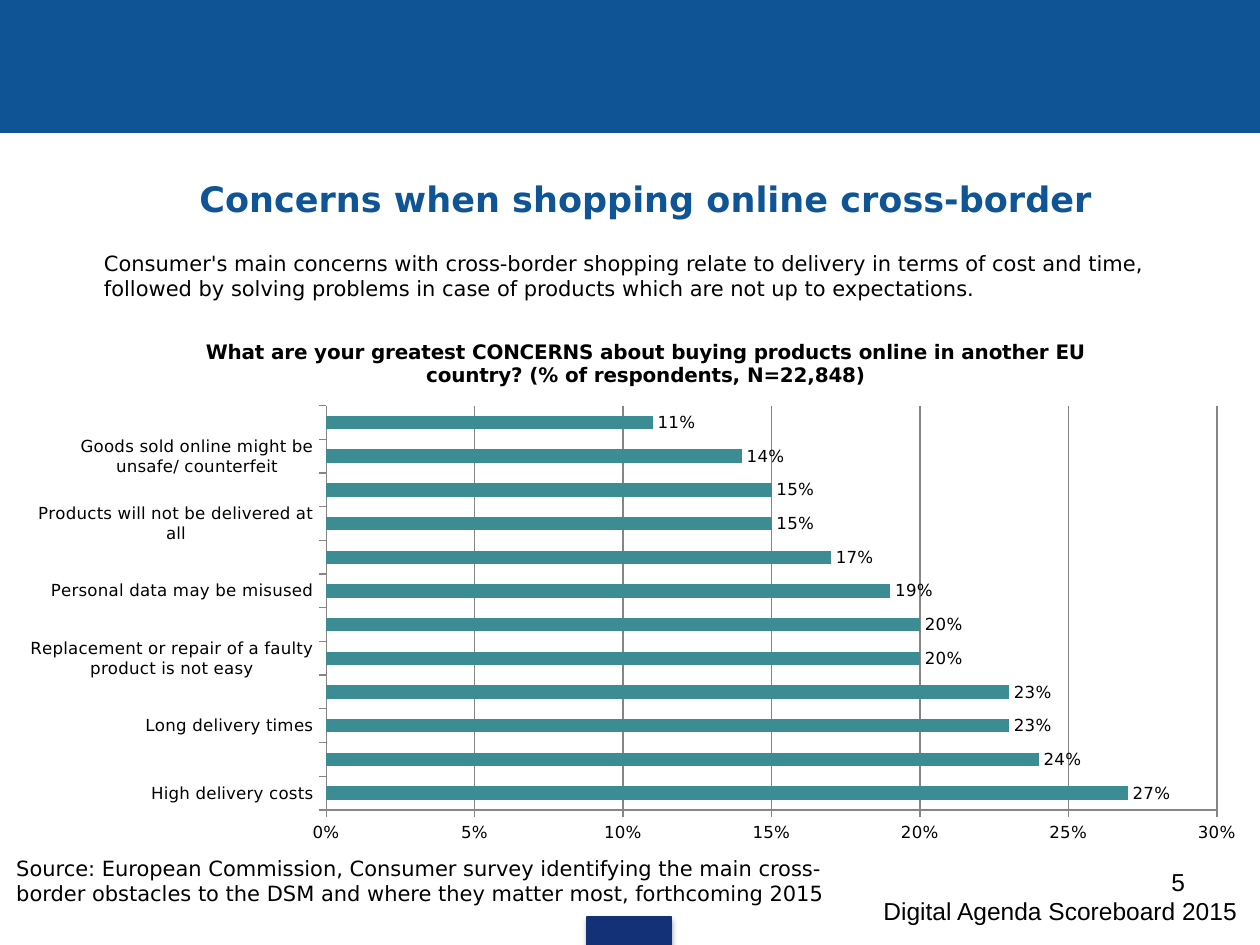
import lxml.etree
import pptx
import pptx.chart.data
import pptx.dml.color
import pptx.enum.chart
import pptx.enum.text
import pptx.oxml
import pptx.oxml.ns
import pptx.util

Pt = pptx.util.Pt
RGB = pptx.dml.color.RGBColor
ALIGN = pptx.enum.text.PP_ALIGN
BLUE = RGB(0x0F, 0x54, 0x94)
NAVY = RGB(0x13, 0x31, 0x76)
TEAL = RGB(0x3C, 0x8C, 0x93)
GREY = RGB(0x86, 0x86, 0x86)
BLACK = RGB(0, 0, 0)
SANS = "DejaVu Sans"
CHART_TITLE = ("What are your greatest CONCERNS about buying products online in "
               "another EU country? (% of respondents, N=22,848)")
CONCERNS = [
    ("High delivery costs", 0.27),
    ("High return shipping costs", 0.24),
    ("Long delivery times", 0.23),
    ("It may be more difficult to solve any problems", 0.23),
    ("Replacement or repair of a faulty product is not easy", 0.2),
    ("Returning a product I didn't like and getting reimbursed is not easy", 0.2),
    ("Personal data may be misused", 0.19),
    ("The payment card details may be stolen", 0.17),
    ("Products will not be delivered at all", 0.15),
    ("Wrong or damaged products will be delivered", 0.15),
    ("Goods sold online might be unsafe/ counterfeit", 0.14),
    ("I do not know consumer rights when buying online from another EU country", 0.11),
]


def parse(tag, body):
    """Build an XML element in the drawing and chart namespaces."""
    return pptx.oxml.parse_xml(
        f"<{tag} {pptx.oxml.ns.nsdecls('a', 'c')}>{body}</{tag.split()[0]}>")


def style(font, size, color=BLACK, name=SANS, bold=False):
    """Set the size, colour, face and weight of a font."""
    font.size, font.name, font.bold = Pt(size), name, bold
    font.color.rgb = color


def place(shape, box):
    """Move a shape to a box of left, top, width and height."""
    shape.left, shape.top, shape.width, shape.height = map(Pt, box)


def add_bar(slide, box, color):
    """Draw a filled rectangle."""
    bar = slide.shapes.add_shape(1, *map(Pt, box))
    bar.shadow.inherit = False
    bar.fill.solid()
    bar.fill.fore_color.rgb = color
    bar.line.color.rgb = color
    bar.line.width = Pt(0.75)
    return bar


def add_bands(slide, box):
    """Draw the header band and the small raised tab at the foot."""
    left, top, width, height = box
    add_bar(slide, (left, top, width, 75.6), BLUE)
    tab = add_bar(slide, (left + 335.5, top + height - 16, 48.2, 16), NAVY)
    shade = parse('a:outerShdw blurRad="39370" dist="22860" dir="5400000" rotWithShape="0"',
                  '<a:srgbClr val="000000"><a:alpha val="35000"/></a:srgbClr>')
    tab._element.spPr.find(pptx.oxml.ns.qn("a:effectLst")).append(shade)


def add_title(slide, box):
    """Fill the title placeholder."""
    title = slide.shapes.title
    place(title, box)
    frame = title.text_frame
    frame.text = "Concerns when shopping online cross-border"
    frame.auto_size = pptx.enum.text.MSO_AUTO_SIZE.NONE
    frame.vertical_anchor = pptx.enum.text.MSO_ANCHOR.MIDDLE
    para = frame.paragraphs[0]
    para.alignment = ALIGN.CENTER
    para._p.get_or_add_pPr().set("marL", str(Pt(28)))
    style(para.font, 20, BLUE, bold=True)


def add_body(slide, box):
    """Fill the body placeholder, whose bullet is white."""
    body = slide.placeholders[1]
    place(body, box)
    frame = body.text_frame
    frame.text = ("Consumer's main concerns with cross-border shopping relate to delivery "
                  "in terms of cost and time, followed by solving problems in case of "
                  "products which are not up to expectations.")
    frame.auto_size = pptx.enum.text.MSO_AUTO_SIZE.NONE
    para = frame.paragraphs[0]
    para.space_before = Pt(0)
    props = para._p.get_or_add_pPr()
    props.set("marL", str(Pt(27)))
    props.set("indent", str(Pt(-27)))
    props.append(parse("a:buClr", '<a:srgbClr val="FFFFFF"/>'))
    props.append(parse('a:buChar char="•"', ""))
    style(para.font, 12)


def add_note(slide, box, text, size, name, align):
    """Add a wrapped text box of one paragraph."""
    frame = slide.shapes.add_textbox(*map(Pt, box)).text_frame
    frame.word_wrap = True
    frame.text = text
    para = frame.paragraphs[0]
    para.alignment = align
    style(para.font, size, name=name)


def add_foot(slide, box):
    """Add the source, the page number and the footer text."""
    left, top, width, height = box
    add_note(slide, (left + 2.2, top, 484.6, 36),
             "Source: European Commission, Consumer survey identifying the main "
             "cross-border obstacles to the DSM and where they matter most, "
             "forthcoming 2015", 12, SANS, ALIGN.LEFT)
    add_note(slide, (left + 516.2, top + 6.5, 168, 37.4), "5", 14, "Arial", ALIGN.RIGHT)
    add_note(slide, (left + 491.8, top + 23, 228.2, 37.4),
             "Digital Agenda Scoreboard 2015", 14, "Arial", ALIGN.CENTER)


def add_chart(slide, box):
    """Add the bar chart of concerns."""
    data = pptx.chart.data.CategoryChartData(number_format="0%")
    names, vals = zip(*CONCERNS)
    data.categories = names
    data.add_series("Series 1", vals)
    kind = pptx.enum.chart.XL_CHART_TYPE.BAR_CLUSTERED
    chart = slide.shapes.add_chart(kind, *map(Pt, box), data).chart
    style(chart.font, 9.5)
    chart.has_legend = False
    chart.has_title = True
    frame = chart.chart_title.text_frame
    frame.text = CHART_TITLE
    style(frame.paragraphs[0].font, 11.4, bold=True)

    plot = chart.plots[0]
    plot.gap_width = 150
    plot.vary_by_categories = False
    fill = plot.series[0].format.fill
    fill.solid()
    fill.fore_color.rgb = TEAL
    plot.has_data_labels = True
    labels = plot.data_labels
    labels.show_value = True
    labels.number_format, labels.number_format_is_linked = "0%", False
    labels.position = pptx.enum.chart.XL_LABEL_POSITION.OUTSIDE_END
    style(labels.font, 9.5)

    scale = chart.value_axis
    scale.minimum_scale, scale.maximum_scale, scale.major_unit = 0, 0.3, 0.05
    scale.tick_labels.number_format = "0%"
    scale.tick_labels.number_format_is_linked = False
    scale.has_major_gridlines = True
    scale.major_gridlines.format.line.color.rgb = GREY
    for axis in (scale, chart.category_axis):
        axis.major_tick_mark = pptx.enum.chart.XL_TICK_MARK.OUTSIDE
        axis.format.line.color.rgb = GREY
        style(axis.tick_labels.font, 9.5)

    area = chart._chartSpace.chart.plotArea
    for old in area.findall(pptx.oxml.ns.qn("c:layout")):
        area.remove(old)
    parts = [("layoutTarget", "inner"), ("xMode", "edge"), ("yMode", "edge"),
             ("x", 0.24), ("y", 0.165), ("w", 0.725), ("h", 0.755)]
    inner = "".join(f'<c:{tag} val="{val}"/>' for tag, val in parts)
    area.insert(0, parse("c:layout", f"<c:manualLayout>{inner}</c:manualLayout>"))


def main():
    """Build and save the slide."""
    deck = pptx.Presentation()
    deck.slide_width, deck.slide_height = Pt(720), Pt(540)
    slide = deck.slides.add_slide(deck.slide_layouts[1])
    add_bands(slide, (0, 0, 720, 540))
    add_title(slide, (31, 77, 648, 73.4))
    add_body(slide, (25.2, 139.7, 648, 278))
    add_chart(slide, (17.3, 181.4, 702.7, 306))
    add_foot(slide, (0, 485.3, 720, 54.7))
    deck.save("out.pptx")


if __name__ == "__main__":
    main()
